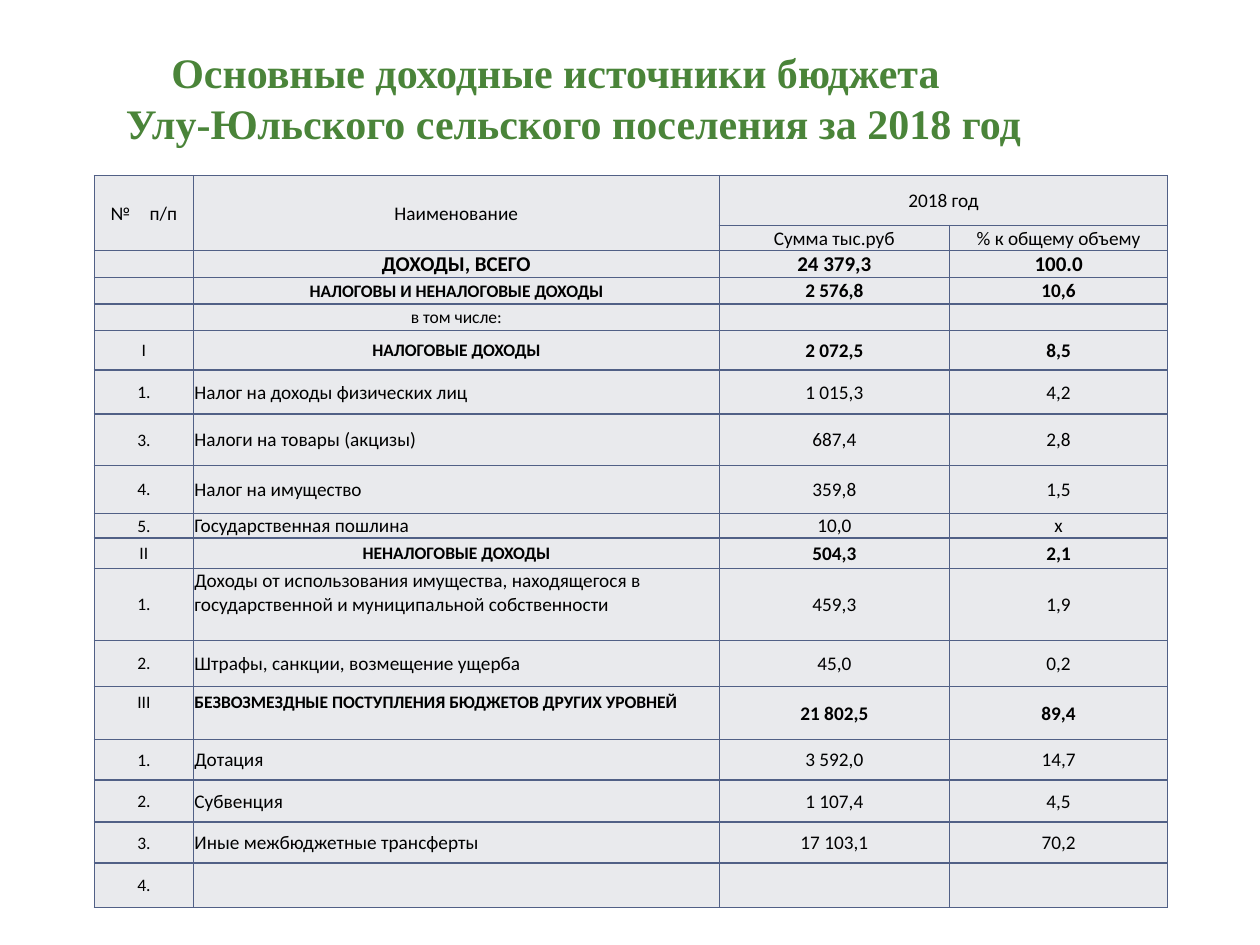
from dataclasses import dataclass
from itertools import product

from lxml.etree import SubElement
from pptx import Presentation
from pptx.dml.color import RGBColor
from pptx.enum.text import MSO_ANCHOR, MSO_AUTO_SIZE, PP_ALIGN
from pptx.oxml.ns import qn
from pptx.util import Cm, Pt


@dataclass(frozen=True)
class Theme:
    title_font: str = "Times New Roman"
    table_font: str = "Calibri"
    title_color: RGBColor = RGBColor(0x4A, 0x84, 0x39)
    text_color: RGBColor = RGBColor(0, 0, 0)
    cell_fill: RGBColor = RGBColor(0xE9, 0xEA, 0xED)
    border_color: str = "516086"
    title_size: int = 24
    total_size: int = 12
    body_size: int = 11
    small_size: int = 10


THEME = Theme()
TITLE = "Основные доходные источники бюджета\vУлу-Юльского сельского поселения за 2018 год"
COLUMN_WIDTHS = (2.0, 10.6, 4.64, 4.4)
HEADER_HEIGHTS = (1.01, 0.49)

# Row kind, height in cm, then number, name, amount and share
INCOME_ROWS = (
    ("total", 0.54, "", "ДОХОДЫ, ВСЕГО", "24 379,3", "100.0"),
    ("section", 0.54, "", "НАЛОГОВЫ И НЕНАЛОГОВЫЕ ДОХОДЫ", "2 576,8", "10,6"),
    ("note", 0.53, "", "в том числе:", "", ""),
    ("section", 0.8, "I", "НАЛОГОВЫЕ ДОХОДЫ", "2 072,5", "8,5"),
    ("item", 0.89, "1.", "Налог на доходы физических лиц", "1 015,3", "4,2"),
    ("item", 1.03, "3.", "Налоги на товары (акцизы)", "687,4", "2,8"),
    ("item", 0.97, "4.", "Налог на имущество", "359,8", "1,5"),
    ("item", 0.5, "5.", "Государственная пошлина", "10,0", "х"),
    ("section", 0.61, "II", "НЕНАЛОГОВЫЕ ДОХОДЫ", "504,3", "2,1"),
    ("long item", 1.45, "1.", "Доходы от использования имущества, находящегося в "
     "государственной и муниципальной собственности", "459,3", "1,9"),
    ("item", 0.93, "2.", "Штрафы, санкции, возмещение ущерба", "45,0", "0,2"),
    ("long section", 1.07, "III", "БЕЗВОЗМЕЗДНЫЕ ПОСТУПЛЕНИЯ БЮДЖЕТОВ ДРУГИХ УРОВНЕЙ",
     "21 802,5", "89,4"),
    ("item", 0.81, "1.", "Дотация", "3 592,0", "14,7"),
    ("item", 0.85, "2.", "Субвенция", "1 107,4", "4,5"),
    ("item", 0.83, "3.", "Иные межбюджетные трансферты", "17 103,1", "70,2"),
    ("item", 0.89, "4.", "", "", ""),
)


def add_title(slide, left, top, width, height):
    title = slide.shapes.title
    title.left, title.top, title.width, title.height = left, top, width, height
    frame = title.text_frame
    frame.margin_left = frame.margin_right = frame.margin_top = frame.margin_bottom = 0
    frame.vertical_anchor = MSO_ANCHOR.TOP
    frame.auto_size = MSO_AUTO_SIZE.NONE
    frame.word_wrap = True
    frame.text = TITLE
    paragraph = frame.paragraphs[0]
    paragraph.alignment = PP_ALIGN.CENTER
    font = paragraph.font
    font.name, font.size, font.bold = THEME.title_font, Pt(THEME.title_size), True
    font.color.rgb = THEME.title_color
    # A hanging indent sets the first line slightly left of the second
    properties = paragraph._p.get_or_add_pPr()
    properties.set("marL", str(Cm(0.72)))
    properties.set("indent", str(-Cm(0.72)))


def set_borders(cell):
    properties = cell._tc.get_or_add_tcPr()
    for position, side in enumerate(("lnL", "lnR", "lnT", "lnB")):
        line = SubElement(properties, qn(f"a:{side}"), w=str(Pt(1)))
        properties.remove(line)
        properties.insert(position, line)
        fill = SubElement(line, qn("a:solidFill"))
        SubElement(fill, qn("a:srgbClr"), val=THEME.border_color)


def format_cell(cell):
    cell.margin_left = cell.margin_right = cell.margin_top = Cm(0.02)
    cell.margin_bottom = 0
    cell.vertical_anchor = MSO_ANCHOR.MIDDLE
    cell.fill.solid()
    cell.fill.fore_color.rgb = THEME.cell_fill
    set_borders(cell)


def write_cell(cell, text, size=THEME.body_size, bold=False, alignment=PP_ALIGN.CENTER):
    cell.text = text
    paragraph = cell.text_frame.paragraphs[0]
    paragraph.alignment = alignment
    font = paragraph.font
    font.name, font.size, font.bold = THEME.table_font, Pt(size), bold
    font.color.rgb = THEME.text_color


def write_header(table):
    for row, column, text in (
        (0, 0, "№\u2003п/п"), (0, 1, "Наименование"), (0, 2, "2018 год"),
        (1, 2, "Сумма тыс.руб"), (1, 3, "% к общему объему"),
    ):
        write_cell(table.cell(row, column), text)
    for column in (0, 1):
        table.cell(0, column).merge(table.cell(1, column))
    table.cell(0, 2).merge(table.cell(0, 3))


def write_income_row(cells, kind, number, name, amount, share):
    bold = kind in ("total", "section", "long section")
    value_size = THEME.total_size if kind == "total" else THEME.body_size
    name_size = THEME.small_size if kind in ("section", "long section", "note") else value_size
    left_aligned = kind in ("item", "long item", "long section")
    write_cell(cells[0], number, THEME.small_size)
    write_cell(cells[1], name, name_size, bold,
               PP_ALIGN.LEFT if left_aligned else PP_ALIGN.CENTER)
    for cell, value in zip(cells[2:], (amount, share)):
        write_cell(cell, value, value_size, bold)
    if kind.startswith("long"):
        cells[1].vertical_anchor = MSO_ANCHOR.TOP
    if kind == "long section":
        cells[0].vertical_anchor = MSO_ANCHOR.TOP
        for cell in cells[:2]:
            cell.margin_top = Cm(0.1)


def add_income_table(slide, left, top):
    heights = HEADER_HEIGHTS + tuple(row[1] for row in INCOME_ROWS)
    table = slide.shapes.add_table(
        len(heights), len(COLUMN_WIDTHS), left, top,
        Cm(sum(COLUMN_WIDTHS)), Cm(sum(heights))).table
    table.first_row = table.horz_banding = False
    for column, width in zip(table.columns, COLUMN_WIDTHS):
        column.width = Cm(width)
    for row, height in zip(table.rows, heights):
        row.height = Cm(height)
    for row, column in product(range(len(heights)), range(len(COLUMN_WIDTHS))):
        cell = table.cell(row, column)
        format_cell(cell)
        write_cell(cell, "", THEME.small_size)
    write_header(table)
    for row, (kind, _, *texts) in enumerate(INCOME_ROWS, len(HEADER_HEIGHTS)):
        cells = [table.cell(row, column) for column in range(len(COLUMN_WIDTHS))]
        write_income_row(cells, kind, *texts)


def main():
    presentation = Presentation()
    presentation.slide_width, presentation.slide_height = Cm(25.4), Cm(19.05)
    slide = presentation.slides.add_slide(presentation.slide_layouts[5])
    add_title(slide, Cm(0.8), Cm(0.94), Cm(20.8), Cm(2.2))
    add_income_table(slide, Cm(1.9), Cm(3.54))
    presentation.save("out.pptx")


if __name__ == "__main__":
    main()
